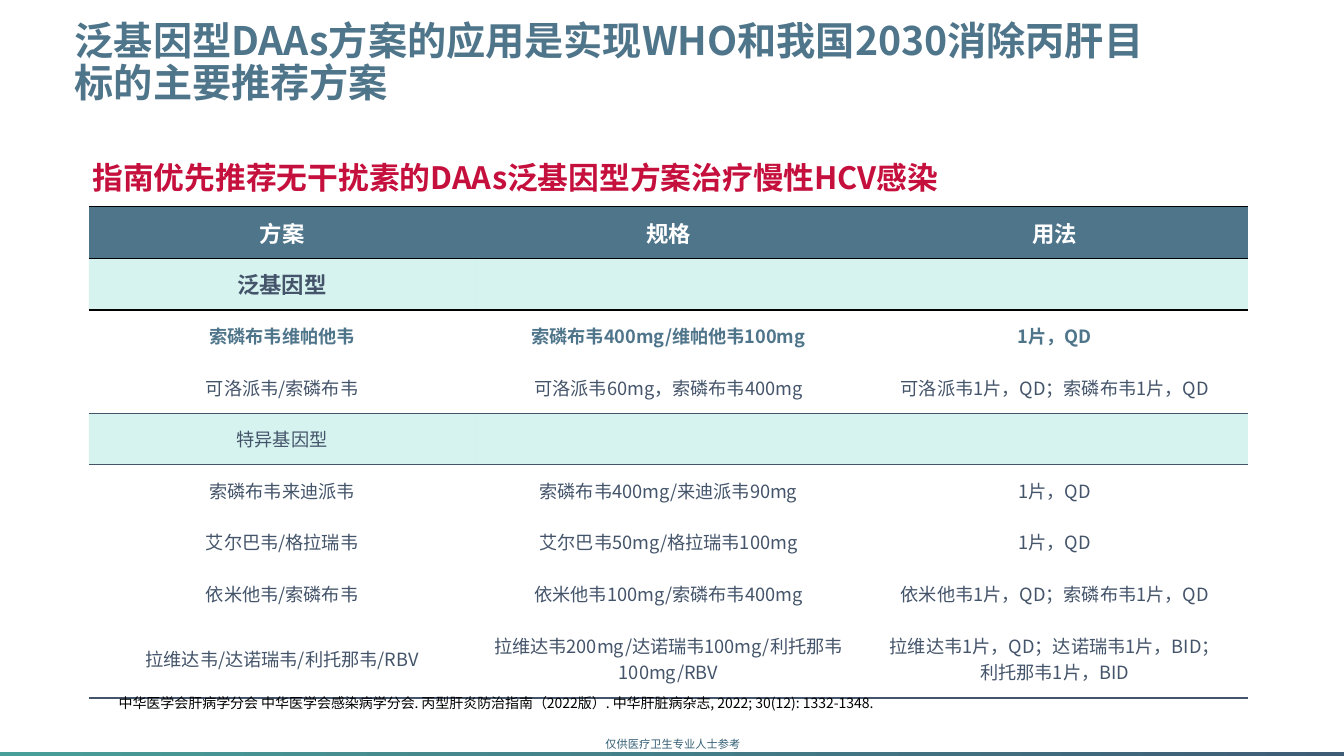
from dataclasses import dataclass

from lxml import etree
from pptx import Presentation
from pptx.dml.color import RGBColor
from pptx.enum.shapes import MSO_SHAPE
from pptx.enum.text import MSO_ANCHOR, MSO_AUTO_SIZE, PP_ALIGN
from pptx.oxml.ns import qn
from pptx.slide import Slide
from pptx.table import _Cell
from pptx.text.text import TextFrame
from pptx.util import Cm, Pt

TOP, MIDDLE = MSO_ANCHOR.TOP, MSO_ANCHOR.MIDDLE
LEFT, CENTER = PP_ALIGN.LEFT, PP_ALIGN.CENTER
FIXED_SIZE = MSO_AUTO_SIZE.NONE
RECTANGLE = MSO_SHAPE.RECTANGLE
CJK_FONT = "Noto Sans CJK SC"
PLAIN_TABLE_STYLE = "{2D5ABB26-0587-4C30-8999-92F81FD0307C}"
COLORS = {
    "steel": "4F758B",
    "slate": "44546A",
    "mint": "35C4AF",
    "red": "C50F3C",
    "white": "FFFFFF",
    "black": "000000",
    "footer": "356077",
    "bar_start": "489E98",
    "bar_end": "3E5C76",
}


@dataclass(frozen=True)
class TextStyle:
    size: float
    color: str
    bold: bool = False
    font: str = CJK_FONT
    align: PP_ALIGN = LEFT


@dataclass(frozen=True)
class Label:
    text: str
    left: float
    top: float
    width: float
    height: float
    style: TextStyle
    anchor: MSO_ANCHOR = MIDDLE
    margin_top: float = 0.13
    wrap: bool = True


@dataclass(frozen=True)
class Border:
    color: str
    width: float


@dataclass(frozen=True)
class TableRow:
    texts: tuple[str, ...]
    style: TextStyle
    fill: str | None = None
    opacity: int = 100
    top: Border | None = None
    bottom: Border | None = None


HEADER = TextStyle(16, "white", True, align=CENTER)
GROUP = TextStyle(16, "slate", True, align=CENTER)
FEATURED = TextStyle(13, "steel", True, align=CENTER)
BODY = TextStyle(13, "slate", align=CENTER)
BLACK_LINE = Border("black", 1)
SLATE_LINE = Border("slate", 1)

TITLE = "泛基因型DAAs方案的应用是实现WHO和我国2030消除丙肝目标的主要推荐方案"
LABELS = [
    Label("仅供医疗卫生专业人士参考", 15.01, 18.44, 3.94, 0.61,
          TextStyle(8, "footer", font="Arial"), TOP, wrap=False),
    Label("中华医学会肝病学分会 中华医学会感染病学分会. 丙型肝炎防治指南（2022版）. "
          "中华肝脏病杂志, 2022; 30(12): 1332-1348.",
          2.74, 17.25, 24.03, 0.94, TextStyle(10, "black")),
    Label("指南优先推荐无干扰素的DAAs泛基因型方案治疗慢性HCV感染",
          2.08, 3.51, 28.7, 1.5, TextStyle(22, "red", True), TOP, 0.48),
]
TABLE_ROWS = [
    TableRow(("方案", "规格", "用法"), HEADER, "steel", top=BLACK_LINE, bottom=BLACK_LINE),
    TableRow(("泛基因型", "", ""), GROUP, "mint", 20, top=BLACK_LINE),
    TableRow(("索磷布韦维帕他韦", "索磷布韦400mg/维帕他韦100mg", "1片，QD"), FEATURED),
    TableRow(("可洛派韦/索磷布韦", "可洛派韦60mg，索磷布韦400mg",
              "可洛派韦1片，QD；索磷布韦1片，QD"), BODY, bottom=SLATE_LINE),
    TableRow(("特异基因型", "", ""), BODY, "mint", 20, top=SLATE_LINE),
    TableRow(("索磷布韦来迪派韦", "索磷布韦400mg/来迪派韦90mg", "1片，QD"), BODY),
    TableRow(("艾尔巴韦/格拉瑞韦", "艾尔巴韦50mg/格拉瑞韦100mg", "1片，QD"), BODY),
    TableRow(("依米他韦/索磷布韦", "依米他韦100mg/索磷布韦400mg",
              "依米他韦1片，QD；索磷布韦1片，QD"), BODY),
    TableRow(("拉维达韦/达诺瑞韦/利托那韦/RBV", "拉维达韦200mg/达诺瑞韦100mg/利托那韦100mg/RBV",
              "拉维达韦1片，QD；达诺瑞韦1片，BID；\n利托那韦1片，BID"),
             BODY, bottom=Border("slate", 1.5)),
]


def rgb(name: str) -> RGBColor:
    return RGBColor.from_string(COLORS[name])


def write_text(text_frame: TextFrame, text: str, style: TextStyle) -> None:
    text_frame.text = text
    for paragraph in text_frame.paragraphs:
        paragraph.alignment = style.align
        for run in paragraph.runs:
            run.font.size = Pt(style.size)
            run.font.bold = style.bold
            run.font.color.rgb = rgb(style.color)
            run.font.name = style.font
            east_asian = etree.SubElement(run.font._element, qn("a:ea"))
            east_asian.set("typeface", CJK_FONT)


def add_title(slide: Slide) -> None:
    title = slide.shapes.title
    title.left, title.top, title.width, title.height = Cm(1.63), Cm(1.02), Cm(28.27), Cm(1.19)
    title.text_frame.word_wrap = True
    title.text_frame.auto_size = FIXED_SIZE
    title.text_frame.vertical_anchor = MIDDLE
    write_text(title.text_frame, TITLE, TextStyle(28, "steel", True))
    title.text_frame.paragraphs[0].line_spacing = 0.9


def add_label(slide: Slide, label: Label) -> None:
    box = slide.shapes.add_textbox(Cm(label.left), Cm(label.top), Cm(label.width), Cm(label.height))
    box.text_frame.word_wrap = label.wrap
    box.text_frame.vertical_anchor = label.anchor
    box.text_frame.margin_top = Cm(label.margin_top)
    write_text(box.text_frame, label.text, label.style)


def add_bottom_bar(slide: Slide) -> None:
    bar = slide.shapes.add_shape(RECTANGLE, Cm(-0.03), Cm(18.95), Cm(34), Cm(0.18))
    bar.shadow.inherit = False
    bar.line.fill.background()
    bar.fill.gradient()
    bar.fill.gradient_angle = 0
    for stop, color in zip(bar.fill.gradient_stops, ("bar_start", "bar_end")):
        stop.color.rgb = rgb(color)


def add_border(cell: _Cell, tag: str, border: Border) -> None:
    properties = cell._tc.get_or_add_tcPr()
    line = etree.SubElement(properties, qn(tag), w=str(Pt(border.width)))
    solid = etree.SubElement(line, qn("a:solidFill"))
    etree.SubElement(solid, qn("a:srgbClr"), val=COLORS[border.color])


def format_cell(cell: _Cell, text: str, row: TableRow) -> None:
    write_text(cell.text_frame, text, row.style)
    cell.vertical_anchor = MIDDLE
    cell.margin_left = cell.margin_right = Cm(0.3)
    cell.margin_top = cell.margin_bottom = 0
    # Border elements must precede the fill in the cell properties.
    for tag, border in (("a:lnT", row.top), ("a:lnB", row.bottom)):
        if border:
            add_border(cell, tag, border)
    if row.fill is None:
        cell.fill.background()
        return
    cell.fill.solid()
    cell.fill.fore_color.rgb = rgb(row.fill)
    if row.opacity < 100:
        color = cell._tc.tcPr.find(qn("a:solidFill")).find(qn("a:srgbClr"))
        etree.SubElement(color, qn("a:alpha"), val=str(row.opacity * 1000))


def add_regimen_table(slide: Slide) -> None:
    row_count, column_count = len(TABLE_ROWS), len(TABLE_ROWS[0].texts)
    frame = slide.shapes.add_table(
        row_count, column_count, Cm(2.24), Cm(5.21), Cm(29.21), Cm(1.3 * row_count))
    table = frame.table
    table.first_row = table.horz_banding = False
    table._tbl.tblPr.find(qn("a:tableStyleId")).text = PLAIN_TABLE_STYLE
    for row_index, row in enumerate(TABLE_ROWS):
        for column_index, text in enumerate(row.texts):
            format_cell(table.cell(row_index, column_index), text, row)


def main() -> None:
    presentation = Presentation()
    presentation.slide_width, presentation.slide_height = Cm(33.87), Cm(19.05)
    slide = presentation.slides.add_slide(presentation.slide_layouts.get_by_name("Title Only"))
    add_bottom_bar(slide)
    add_title(slide)
    add_regimen_table(slide)
    for label in LABELS:
        add_label(slide, label)
    presentation.save("out.pptx")


if __name__ == "__main__":
    main()
